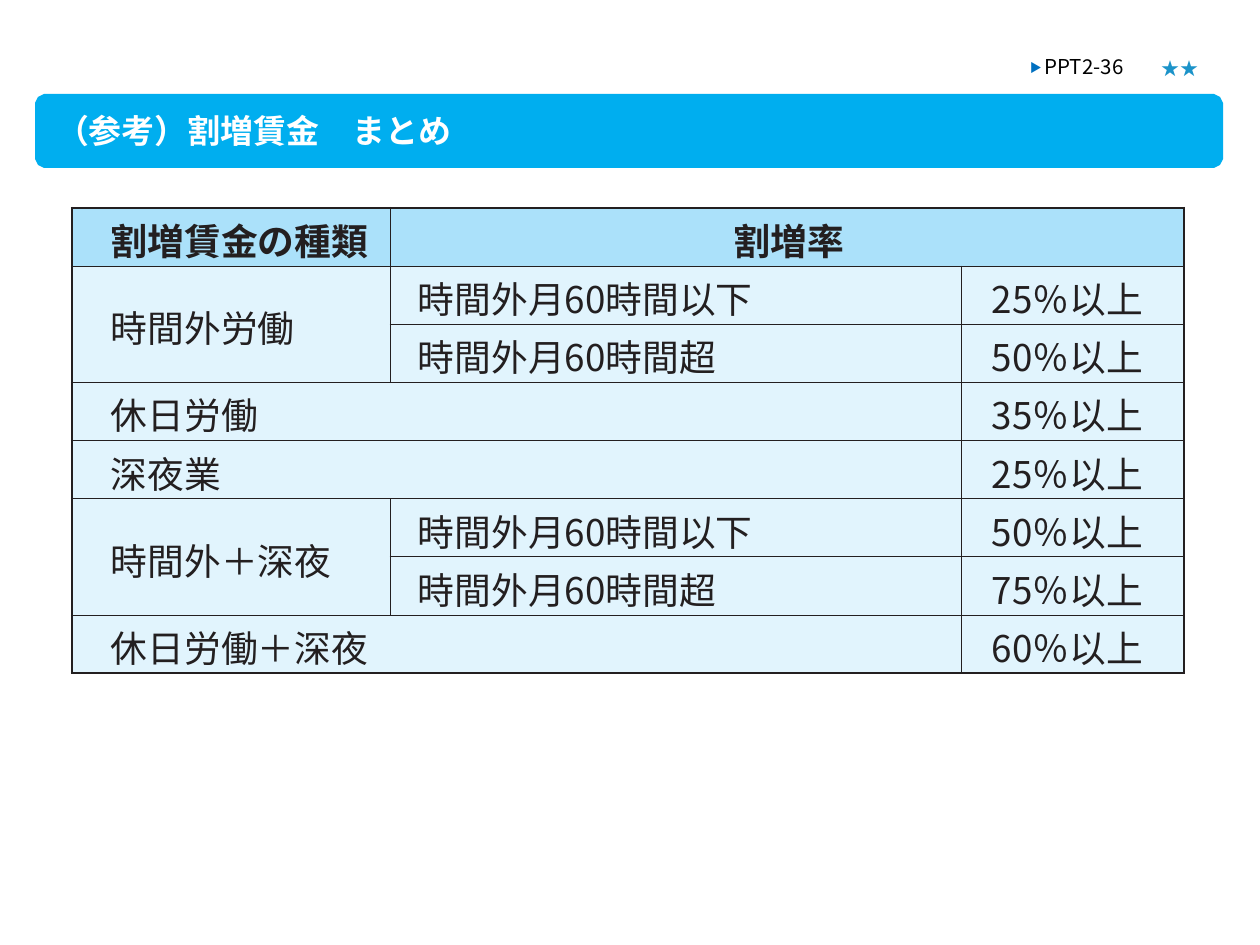
import pptx
import pptx.util
import pptx.dml.color
import pptx.enum.text
import pptx.oxml.ns
import lxml.etree

PX = 914400 / 126
FONT = "Noto Sans CJK JP"
COLORS = {"bar": "00AEEF", "head": "ABE1FA", "body": "E1F4FD", "ink": "231F20",
          "white": "FFFFFF", "black": "000000", "marker": "0070C0", "star": "1B93C9"}
ALIGN = pptx.enum.text.PP_ALIGN
ANCHOR = pptx.enum.text.MSO_ANCHOR
qn = pptx.oxml.ns.qn


def px(value):
    return pptx.util.Emu(round(value * PX))


def write(frame, text, *, size, color, bold=False, align=ALIGN.LEFT, raised=0):
    """Add a formatted span to the first paragraph of a text frame."""
    para = frame.paragraphs[0]
    para.alignment = align
    span = para.add_run()
    span.text = text
    span.font.size = pptx.util.Pt(size)
    span.font.bold = bold
    span.font.name = FONT
    span.font.color.rgb = pptx.dml.color.RGBColor.from_string(COLORS[color])
    props = span._r.get_or_add_rPr()
    lxml.etree.SubElement(props, qn("a:ea")).set("typeface", FONT)
    if raised:
        props.set("baseline", str(raised * 1000))


deck = pptx.Presentation()
deck.slide_width, deck.slide_height = px(1260), px(945)
page = deck.slides.add_slide(deck.slide_layouts[5])

# Title bar with clipped corners, behind the title
left, top, right, bottom = 35, 94, 1223, 168
corner = [(0, 20), (0, 9), (3, 3), (9, 0), (20, 0)]
points = [(left + x, top + y) for x, y in corner]
points += [(right - x, top + y) for x, y in reversed(corner)]
points += [(right - x, bottom - y) for x, y in corner]
points += [(left + x, bottom - y) for x, y in reversed(corner)]
outline = page.shapes.build_freeform(*points[0], scale=PX)
outline.add_line_segments(points[1:], close=True)
bar = outline.convert_to_shape()
bar.shadow.inherit = False
bar.fill.solid()
bar.fill.fore_color.rgb = pptx.dml.color.RGBColor.from_string(COLORS["bar"])
bar.line.fill.background()
page.shapes._spTree.insert(2, bar._element)

# Title, page code and star rating
code = page.shapes.add_textbox(0, 0, 0, 0)
stars = page.shapes.add_textbox(0, 0, 0, 0)
for box, place, inset in [(page.shapes.title, (55, 108, 619, 42), 1),
                          (code, (1029, 52, 125, 26), 1),
                          (stars, (1142, 50, 79, 34), 20)]:
    box.left, box.top, box.width, box.height = map(px, place)
    frame = box.text_frame
    frame.word_wrap = True
    frame.auto_size = pptx.enum.text.MSO_AUTO_SIZE.NONE
    frame.vertical_anchor = ANCHOR.MIDDLE
    frame.margin_left, frame.margin_top = px(inset), px(2)
    frame.margin_right = frame.margin_bottom = 0
write(page.shapes.title.text_frame, "（参考）割増賃金　まとめ", size=18.8, color="white", bold=True)
write(code.text_frame, "▶ ", size=11.7, color="marker", raised=9)
write(code.text_frame, "PPT2-36", size=11.7, color="black")
write(stars.text_frame, "★★", size=10.3, color="star")

# Table of premium rates; None continues the merged cell to the left or above
rows = [
    ["割増賃金の種類", "割増率", None],
    ["時間外労働", "時間外月60時間以下", "25％以上"],
    [None, "時間外月60時間超", "50％以上"],
    ["休日労働", None, "35％以上"],
    ["深夜業", None, "25％以上"],
    ["時間外＋深夜", "時間外月60時間以下", "50％以上"],
    [None, "時間外月60時間超", "75％以上"],
    ["休日労働＋深夜", None, "60％以上"],
]
widths = [318, 571, 223]
indents = [39, 28, 31]
row_height = 58
table = page.shapes.add_table(len(rows), len(widths), px(72), px(208), px(sum(widths)),
                              px(row_height * len(rows))).table
table.first_row = table.horz_banding = False
style = table._tbl.tblPr.find(qn("a:tableStyleId"))
style.text = "{2D5ABB26-0587-4C30-8999-92F81FD0307C}"
for column, width in zip(table.columns, widths):
    column.width = px(width)
for row in table.rows:
    row.height = px(row_height)
for first, last in [((0, 1), (0, 2)), ((1, 0), (2, 0)), ((3, 0), (3, 1)),
                    ((4, 0), (4, 1)), ((5, 0), (6, 0)), ((7, 0), (7, 1))]:
    table.cell(*first).merge(table.cell(*last))

for r, texts in enumerate(rows):
    for c, text in enumerate(texts):
        if text is None:
            continue
        cell = table.cell(r, c)
        tall = cell.span_height if cell.is_merge_origin else 1
        wide = cell.span_width if cell.is_merge_origin else 1
        centered = wide == 2 and r == 0
        cell.margin_left = px(4 if centered else indents[c])
        cell.margin_top = px(34 if tall == 2 else 5)
        cell.margin_right = cell.margin_bottom = 0
        cell.vertical_anchor = ANCHOR.TOP
        write(cell.text_frame, text, size=21, color="ink", bold=r == 0,
              align=ALIGN.CENTER if centered else ALIGN.LEFT)
        cell.fill.solid()
        cell.fill.fore_color.rgb = pptx.dml.color.RGBColor.from_string(
            COLORS["head" if r == 0 else "body"])

        # Thick lines on the outer frame, thin lines inside
        outer = {"lnL": c == 0, "lnR": c + wide == len(widths),
                 "lnT": r == 0, "lnB": r + tall == len(rows)}
        props = cell._tc.get_or_add_tcPr()
        for index, (side, thick) in enumerate(outer.items()):
            border = lxml.etree.Element(qn("a:" + side))
            border.set("w", str(pptx.util.Pt(1.5 if thick else 0.5)))
            fill = lxml.etree.SubElement(border, qn("a:solidFill"))
            lxml.etree.SubElement(fill, qn("a:srgbClr")).set("val", COLORS["ink"])
            props.insert(index, border)

deck.save("out.pptx")
